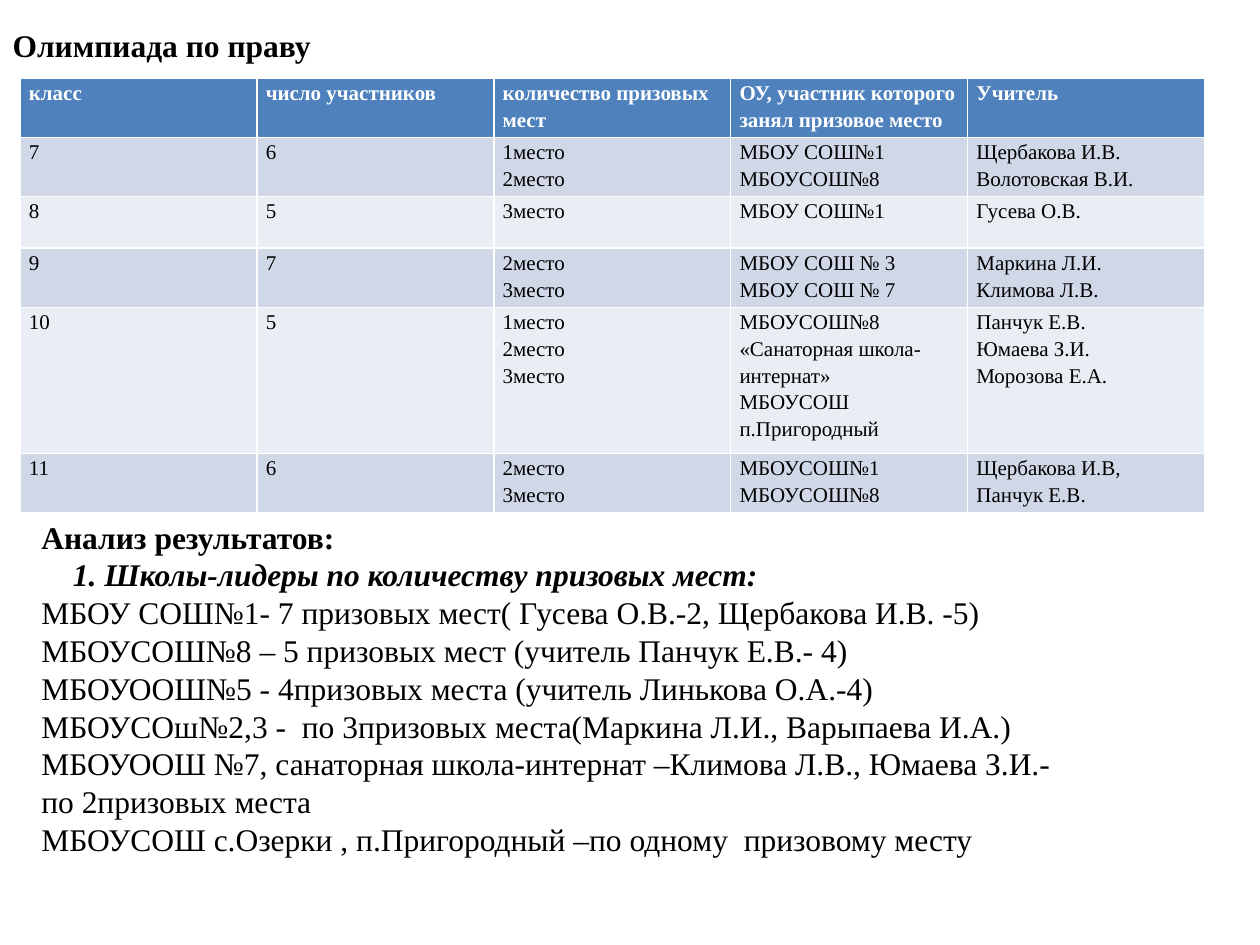
"""Build the law olympiad results slide."""
from lxml import etree
from pptx import Presentation
from pptx.dml.color import RGBColor
from pptx.enum.text import MSO_ANCHOR, MSO_AUTO_SIZE, PP_ALIGN
from pptx.oxml.ns import qn
from pptx.util import Inches, Pt

TOP = MSO_ANCHOR.TOP
LEFT = PP_ALIGN.LEFT
FIT_SHAPE = MSO_AUTO_SIZE.SHAPE_TO_FIT_TEXT
FONT = "Times New Roman"
HEADER_FILL, BAND_FILLS = "4F81BD", ("D0D8E8", "E9EDF4")

TITLE = "Олимпиада по праву"
RESULTS = [
    ("класс", "число участников", "количество призовых мест",
     "ОУ, участник которого занял призовое место", "Учитель"),
    ("7", "6", "1место\n2место", "МБОУ СОШ№1\nМБОУСОШ№8",
     "Щербакова И.В.\nВолотовская В.И."),
    ("8", "5", "3место", "МБОУ СОШ№1", "Гусева О.В."),
    ("9", "7", "2место\n3место", "МБОУ СОШ № 3\nМБОУ СОШ № 7",
     "Маркина Л.И.\nКлимова Л.В."),
    ("10", "5", "1место\n2место\n3место",
     "МБОУСОШ№8\n«Санаторная школа-интернат»\nМБОУСОШ п.Пригородный",
     "Панчук Е.В.\nЮмаева З.И.\nМорозова Е.А."),
    ("11", "6", "2место\n3место", "МБОУСОШ№1\nМБОУСОШ№8",
     "Щербакова И.В,\nПанчук Е.В."),
]
ROW_HEIGHTS = (0.47, 0.47, 0.41, 0.47, 1.16, 0.47)
COLUMN_WIDTH = 1.88
ANALYSIS_HEADING = "Анализ результатов:"
LEADERS_HEADING = "Школы-лидеры по количеству призовых мест:"
LEADERS = [
    "МБОУ СОШ№1- 7 призовых мест( Гусева О.В.-2, Щербакова И.В. -5)",
    "МБОУСОШ№8 – 5 призовых мест (учитель Панчук Е.В.- 4)",
    "МБОУООШ№5 - 4призовых места (учитель Линькова О.А.-4)",
    "МБОУСОш№2,3 -  по 3призовых места(Маркина Л.И., Варыпаева И.А.)",
    "МБОУООШ №7, санаторная школа-интернат –Климова Л.В., Юмаева З.И.- по 2призовых места",
    "МБОУСОШ с.Озерки , п.Пригородный –по одному  призовому месту",
]


def color(value):
    return RGBColor.from_string(value)


def style(paragraph, size, ink="000000", bold=False, italic=False):
    font = paragraph.font
    font.name, font.size = FONT, Pt(size)
    font.bold, font.italic = bold, italic
    font.color.rgb = color(ink)


def place(box, left, top, width, height):
    box.left, box.top = Inches(left), Inches(top)
    box.width, box.height = Inches(width), Inches(height)


def number(paragraph):
    properties = paragraph._p.get_or_add_pPr()
    properties.set("marL", str(Inches(0.5)))
    properties.set("indent", str(Inches(-0.25)))
    etree.SubElement(properties, qn("a:buFont")).set("typeface", "+mj-lt")
    etree.SubElement(properties, qn("a:buAutoNum")).set("type", "arabicPeriod")


def add_title(slide):
    title = slide.shapes.title
    place(title, 0, 0.16, 3.52, 0.4)
    frame = title.text_frame
    frame.text = TITLE
    frame.vertical_anchor, frame.auto_size = TOP, FIT_SHAPE
    frame.paragraphs[0].alignment = LEFT
    style(frame.paragraphs[0], 18, bold=True)


def add_results(slide):
    columns = len(RESULTS[0])
    table = slide.shapes.add_table(
        len(RESULTS), columns, Inches(0.16), Inches(0.62),
        Inches(COLUMN_WIDTH * columns), Inches(sum(ROW_HEIGHTS))).table
    for column in table.columns:
        column.width = Inches(COLUMN_WIDTH)
    for r, (height, entries) in enumerate(zip(ROW_HEIGHTS, RESULTS)):
        table.rows[r].height = Inches(height)
        header = r == 0
        for c, entry in enumerate(entries):
            cell = table.cell(r, c)
            cell.text = entry
            cell.margin_left = cell.margin_right = Inches(0.07)
            cell.margin_top = cell.margin_bottom = 0
            cell.fill.solid()
            cell.fill.fore_color.rgb = color(HEADER_FILL if header else BAND_FILLS[(r - 1) % 2])
            for paragraph in cell.text_frame.paragraphs:
                paragraph.line_spacing = 1.15
                style(paragraph, 12, "FFFFFF" if header else "000000", bold=header)


def add_analysis(slide):
    analysis = slide.shapes.add_textbox(0, 0, 0, 0)
    place(analysis, 0.23, 4.06, 8.44, 2.83)
    frame = analysis.text_frame
    frame.word_wrap, frame.auto_size = True, FIT_SHAPE
    frame.text = "\n".join([ANALYSIS_HEADING, LEADERS_HEADING, *LEADERS])
    for i, paragraph in enumerate(frame.paragraphs):
        style(paragraph, 18, bold=i < 2, italic=i == 1)
    leaders_heading = frame.paragraphs[1]
    leaders_heading.level = 1
    number(leaders_heading)


def main():
    deck = Presentation()
    deck.slide_width, deck.slide_height = Inches(10), Inches(7.5)
    slide = deck.slides.add_slide(deck.slide_layouts[5])
    add_results(slide)
    add_title(slide)
    add_analysis(slide)
    deck.save("out.pptx")


if __name__ == "__main__":
    main()
